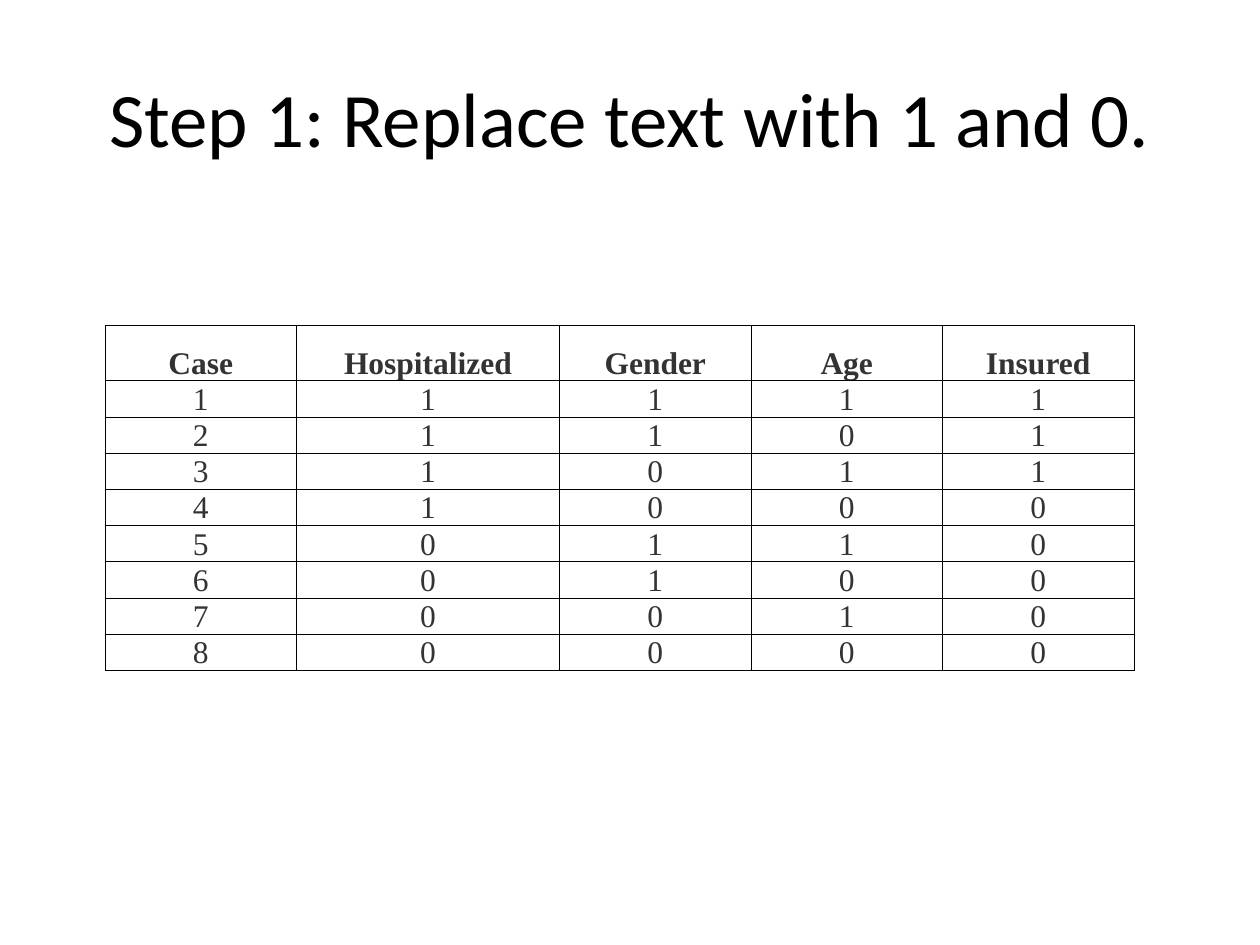
from pptx import Presentation
from pptx.dml.color import RGBColor
from pptx.enum.text import MSO_ANCHOR, PP_ALIGN
from pptx.oxml.ns import qn
from pptx.util import Pt
from lxml.etree import SubElement

HEADS = ["Case", "Hospitalized", "Gender", "Age", "Insured"]
CASES = [
    [1, 1, 1, 1, 1],
    [2, 1, 1, 0, 1],
    [3, 1, 0, 1, 1],
    [4, 1, 0, 0, 0],
    [5, 0, 1, 1, 0],
    [6, 0, 1, 0, 0],
    [7, 0, 0, 1, 0],
    [8, 0, 0, 0, 0],
]


def color(code):
    return RGBColor.from_string(code)


class Deck:
    ink, grey, line = "000000", "333333", 0.5
    sans, serif = "Calibri", "Times New Roman"

    def __init__(self, wide, high):
        self.prs = Presentation()
        self.prs.slide_width, self.prs.slide_height = Pt(wide), Pt(high)
        self.slide = self.prs.slides.add_slide(self.prs.slide_layouts[5])

    def label(self, frame, text, size, font, tint, bold=False):
        frame.text = text
        para = frame.paragraphs[0]
        para.alignment = PP_ALIGN.CENTER
        style = para.runs[0].font
        style.size, style.name, style.bold = Pt(size), font, bold
        style.color.rgb = color(tint)

    def title(self, text, left, top, wide, high):
        shape = self.slide.shapes.title
        shape.left, shape.top = Pt(left), Pt(top)
        shape.width, shape.height = Pt(wide), Pt(high)
        shape.text_frame.vertical_anchor = MSO_ANCHOR.MIDDLE
        self.label(shape.text_frame, text, 44, self.sans, self.ink)

    def border(self, cell):
        props = cell._tc.get_or_add_tcPr()
        for side in ("a:lnL", "a:lnR", "a:lnT", "a:lnB"):
            edge = SubElement(props, qn(side), w=str(Pt(self.line)))
            fill = SubElement(edge, qn("a:solidFill"))
            SubElement(fill, qn("a:srgbClr"), val=self.ink)

    def cell(self, cell, text, bold):
        self.label(cell.text_frame, text, 18, self.serif, self.grey, bold)
        cell.vertical_anchor = MSO_ANCHOR.BOTTOM
        cell.margin_left = cell.margin_right = cell.margin_top = Pt(0.75)
        cell.margin_bottom = 0
        self.border(cell)
        cell.fill.background()

    def table(self, rows, left, top, high, cols, tall):
        shape = self.slide.shapes.add_table(
            len(rows), len(cols), Pt(left), Pt(top), Pt(sum(cols)), Pt(high))
        grid = shape.table
        grid.first_row = grid.horz_banding = False
        for col, wide in zip(grid.columns, cols):
            col.width = Pt(wide)
        for row, size in zip(grid.rows, tall):
            row.height = Pt(size)
        shape.height = Pt(high)
        for r, row in enumerate(rows):
            for c, value in enumerate(row):
                self.cell(grid.cell(r, c), str(value), r == 0)


def main():
    deck = Deck(720, 540)
    # Heading
    deck.title("Step 1: Replace text with 1 and 0.", 36, 21.6, 648, 90)
    # Coded cases: a wide second column and a double-height head row
    deck.table([HEADS] + CASES, 60, 186, 210,
               cols=[109.4, 150.4] + [109.4] * 3,
               tall=[31.6] + [15.8] * len(CASES))
    deck.prs.save("out.pptx")


if __name__ == "__main__":
    main()
